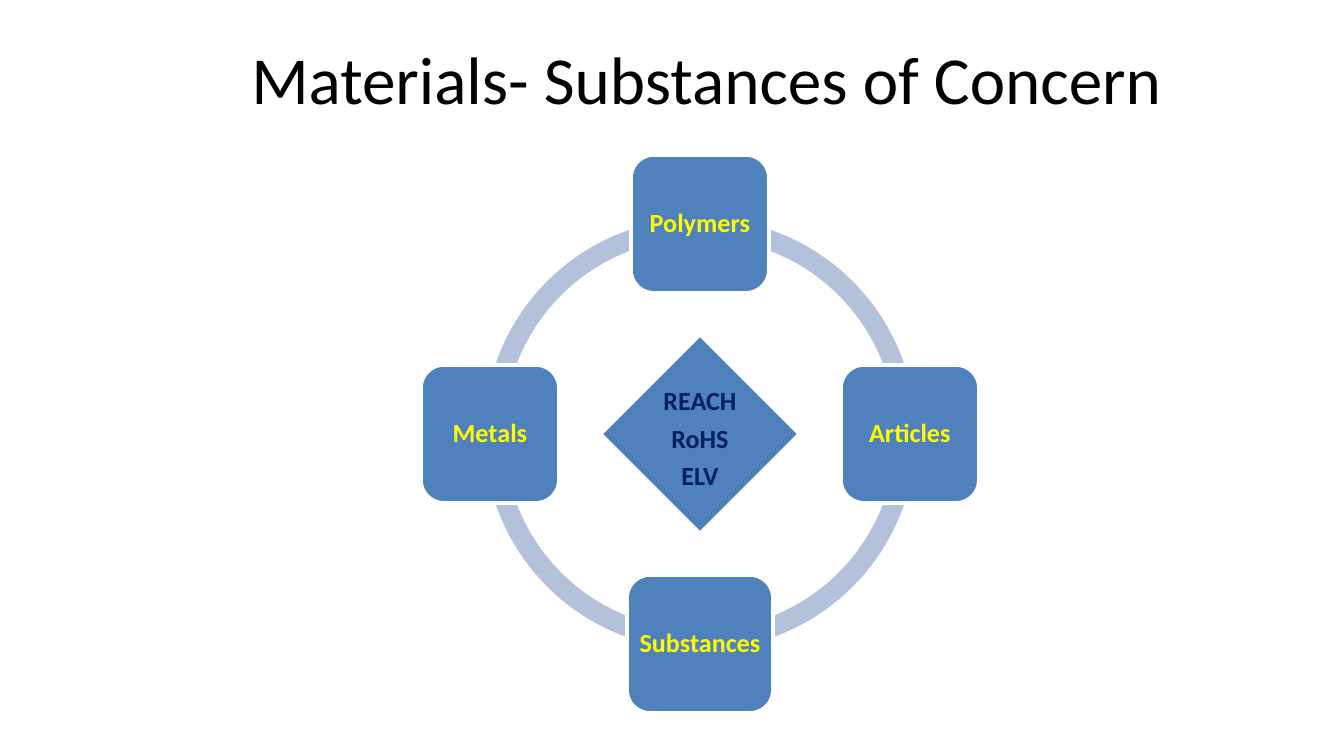
import dataclasses

import pptx
import pptx.dml.color
import pptx.enum.shapes
import pptx.enum.text
import pptx.util

RGB = pptx.dml.color.RGBColor
KIND = pptx.enum.shapes.MSO_SHAPE
ALIGN = pptx.enum.text.PP_ALIGN
ANCHOR = pptx.enum.text.MSO_ANCHOR

BLACK = RGB(0x00, 0x00, 0x00)
WHITE = RGB(0xFF, 0xFF, 0xFF)
BLUE = RGB(0x4F, 0x81, 0xBD)
PALE = RGB(0xB3, 0xC1, 0xDB)
NAVY = RGB(0x00, 0x20, 0x60)
YELLOW = RGB(0xFF, 0xFF, 0x00)

SCALE = 914400 / 134.4
MID_X, MID_Y = 700, 434
RING = 432
REACH = 210
QUARTER, TURN = 54, 216  # arc angles in adjustment units
PAD = 3


@dataclasses.dataclass(frozen=True)
class Node:
    text: str
    dx: int
    dy: int
    width: int = 138
    height: int = 138
    kind: KIND = KIND.FLOWCHART_ALTERNATE_PROCESS
    color: RGB = YELLOW
    drop: int = 0


NODES = (
    Node("REACH\nRoHS\nELV", 0, 0, 199, 199, KIND.DIAMOND, NAVY, 12),
    Node("Polymers", 0, -REACH),
    Node("Articles", REACH, 0),
    Node("Substances", 0, REACH, width=146, kind=KIND.ROUNDED_RECTANGLE),
    Node("Metals", -REACH, 0),
)


def px(count: float) -> int:
    return round(count * SCALE)


def write(frame, text: str, *, size: int, color: RGB, bold: bool = False,
          spacing: float = 1.0, after: int = 0) -> None:
    """Fill a text frame with one centred paragraph for each line."""
    frame.word_wrap = True
    frame.auto_size = pptx.enum.text.MSO_AUTO_SIZE.NONE
    frame.vertical_anchor = ANCHOR.MIDDLE
    lines = text.split("\n")
    for i, line in enumerate(lines):
        para = frame.add_paragraph() if i else frame.paragraphs[0]
        para.alignment = ALIGN.CENTER
        para.line_spacing = spacing
        if i < len(lines) - 1:
            para.space_after = pptx.util.Pt(after)
        run = para.add_run()
        run.text = line
        run.font.name = "Calibri"
        run.font.size = pptx.util.Pt(size)
        run.font.bold = bold
        run.font.color.rgb = color


def add_shape(slide, kind: KIND, x: int, y: int, width: int, height: int,
              fill: RGB):
    """Add a filled shape centred on a point."""
    shape = slide.shapes.add_shape(
        kind, px(x - width / 2), px(y - height / 2), px(width), px(height))
    shape.shadow.inherit = False
    shape.fill.solid()
    shape.fill.fore_color.rgb = fill
    return shape


def draw_arc(slide, start: int) -> None:
    arc = add_shape(slide, KIND.BLOCK_ARC, MID_X, MID_Y, RING, RING, PALE)
    arc.line.fill.background()
    arc.adjustments[0] = start
    arc.adjustments[1] = (start + QUARTER) % TURN
    arc.adjustments[2] = 0.046


def draw_node(slide, node: Node) -> None:
    shape = add_shape(slide, node.kind, MID_X + node.dx, MID_Y + node.dy,
                      node.width, node.height, BLUE)
    shape.line.color.rgb = WHITE
    shape.line.width = pptx.util.Pt(2)
    frame = shape.text_frame
    frame.margin_left = frame.margin_right = frame.margin_bottom = px(PAD)
    frame.margin_top = px(PAD + node.drop)
    write(frame, node.text, size=14, color=node.color, bold=True,
          spacing=0.9, after=5)


def main() -> None:
    deck = pptx.Presentation()
    deck.slide_width, deck.slide_height = px(1344), px(756)
    slide = deck.slides.add_slide(deck.slide_layouts[5])

    title = slide.shapes.title
    title.left, title.top = px(69), px(24)
    title.width, title.height = px(1275), px(108)
    write(title.text_frame, "Materials- Substances of Concern",
          size=36, color=BLACK)

    for start in range(0, TURN, QUARTER):
        draw_arc(slide, start)
    for node in NODES:
        draw_node(slide, node)
    deck.save("out.pptx")


if __name__ == "__main__":
    main()
